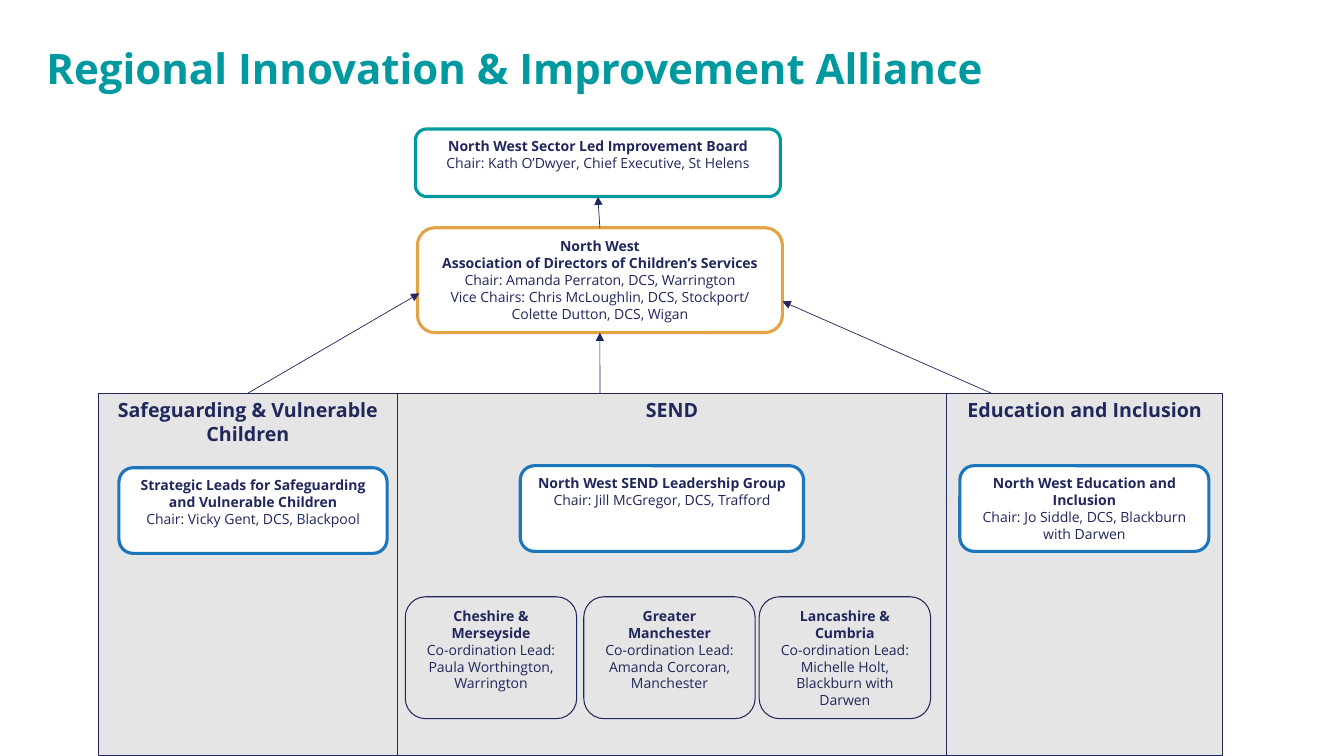
from lxml.etree import SubElement
from pptx import Presentation
from pptx.dml.color import RGBColor
from pptx.enum.shapes import MSO_CONNECTOR, MSO_SHAPE
from pptx.enum.text import MSO_ANCHOR, MSO_AUTO_SIZE, PP_ALIGN
from pptx.oxml.ns import qn
from pptx.util import Inches, Pt

FONT = "Open Sans"
NAVY, TEAL, GOLD, BLUE = "20275C", "0099A0", "E3A447", "1C76BB"
GREY, WHITE = "E5E5E5", "FFFFFF"

TITLE = "Regional Innovation & Improvement Alliance"

THEMES = [
    ("Safeguarding & Vulnerable Children", 2.96),
    ("SEND", 5.45),
    ("Education and Inclusion", 2.74),
]
THEMES_LEFT, THEMES_TOP, THEMES_HEIGHT = 0.98, 3.9, 3.6

BOARD = (["North West Sector Led Improvement Board"],
         ["Chair: Kath O’Dwyer, Chief Executive, St Helens"])
ASSOCIATION = (["North West", "Association of Directors of Children’s Services"],
               ["Chair: Amanda Perraton, DCS, Warrington",
                "Vice Chairs: Chris McLoughlin, DCS, Stockport/",
                "Colette Dutton, DCS, Wigan"])
LEAD_GROUPS = [
    ((1.18, 4.64, 2.66), "Strategic Leads for Safeguarding and Vulnerable Children",
     "Chair: Vicky Gent, DCS, Blackpool"),
    ((5.16, 4.62, 2.81), "North West SEND Leadership Group",
     "Chair: Jill McGregor, DCS, Trafford"),
    ((9.52, 4.62, 2.47), "North West Education and Inclusion",
     "Chair: Jo Siddle, DCS, Blackburn with Darwen"),
]
LEAD_GROUP_HEIGHT = 0.85
SUBREGIONS = [
    (4.02, "Cheshire & Merseyside", "Co-ordination Lead: Paula Worthington, Warrington"),
    (5.79, "Greater Manchester", "Co-ordination Lead: Amanda Corcoran, Manchester"),
    (7.53, "Lancashire & Cumbria",
     "Co-ordination Lead: Michelle Holt, Blackburn with Darwen"),
]
SUBREGION_TOP, SUBREGION_WIDTH, SUBREGION_HEIGHT = 5.92, 1.7, 1.21


def color(value):
    return RGBColor.from_string(value)


def format_run(run, size, bold, ink):
    run.font.name = FONT
    run.font.size = Pt(size)
    run.font.bold = bold
    run.font.color.rgb = color(ink)


def add_box(slide, preset, place, fill, line, weight, headings, details=(), size=10):
    box = slide.shapes.add_shape(preset, *map(Inches, place))
    box.shadow.inherit = False
    box.fill.solid()
    box.fill.fore_color.rgb = color(fill)
    box.line.color.rgb = color(line)
    box.line.width = Pt(weight)
    frame = box.text_frame
    frame.word_wrap = True
    frame.vertical_anchor = MSO_ANCHOR.TOP
    frame.text = "\n".join([*headings, *details])
    for index, paragraph in enumerate(frame.paragraphs):
        paragraph.alignment = PP_ALIGN.CENTER
        format_run(paragraph.runs[0], size, index < len(headings), NAVY)
    return box


def add_arrow(slide, start, end, source=None, target=None):
    arrow = slide.shapes.add_connector(MSO_CONNECTOR.STRAIGHT, *map(Inches, start + end))
    if source:
        arrow.begin_connect(*source)
    if target:
        arrow.end_connect(*target)
    arrow.line.color.rgb = color(NAVY)
    arrow.line.width = Pt(0.5)
    SubElement(arrow.line._get_or_add_ln(), qn("a:tailEnd"), type="triangle")
    SubElement(arrow._element.spPr, qn("a:effectLst"))


def main():
    deck = Presentation()
    deck.slide_width, deck.slide_height = Inches(13.33), Inches(7.5)
    slide = deck.slides.add_slide(deck.slide_layouts[5])

    title = slide.shapes.title
    title.left, title.top, title.width, title.height = map(Inches, (0.36, 0.37, 10.18, 0.61))
    title.text_frame.text = TITLE
    title.text_frame.word_wrap = True
    title.text_frame.auto_size = MSO_AUTO_SIZE.NONE
    title.text_frame.vertical_anchor = MSO_ANCHOR.TOP
    heading = title.text_frame.paragraphs[0]
    heading.alignment = PP_ALIGN.LEFT
    format_run(heading.runs[0], 30, True, TEAL)

    panels = []
    left = THEMES_LEFT
    for theme, width in THEMES:
        panels.append(add_box(slide, MSO_SHAPE.RECTANGLE,
                              (left, THEMES_TOP, width, THEMES_HEIGHT),
                              GREY, NAVY, 0.75, [theme], size=14))
        left += width

    rounded = MSO_SHAPE.ROUNDED_RECTANGLE
    association = add_box(slide, rounded, (4.14, 2.26, 3.62, 1.04),
                          WHITE, GOLD, 2.25, *ASSOCIATION)
    board = add_box(slide, rounded, (4.12, 1.28, 3.62, 0.67), WHITE, TEAL, 2.25, *BOARD)
    for place, group, chair in LEAD_GROUPS:
        add_box(slide, rounded, (*place, LEAD_GROUP_HEIGHT),
                WHITE, BLUE, 2.25, [group], [chair])
    for left, subregion, lead in SUBREGIONS:
        add_box(slide, rounded, (left, SUBREGION_TOP, SUBREGION_WIDTH, SUBREGION_HEIGHT),
                GREY, NAVY, 0.75, [subregion], [lead])

    add_arrow(slide, (2.46, THEMES_TOP), (4.16, 2.91), source=(panels[0], 0))
    add_arrow(slide, (5.95, THEMES_TOP), (5.95, 3.3), target=(association, 2))
    add_arrow(slide, (9.83, THEMES_TOP), (7.76, 2.99))
    add_arrow(slide, (5.95, 2.26), (5.93, 1.95), (association, 0), (board, 2))

    deck.save("out.pptx")


if __name__ == "__main__":
    main()
